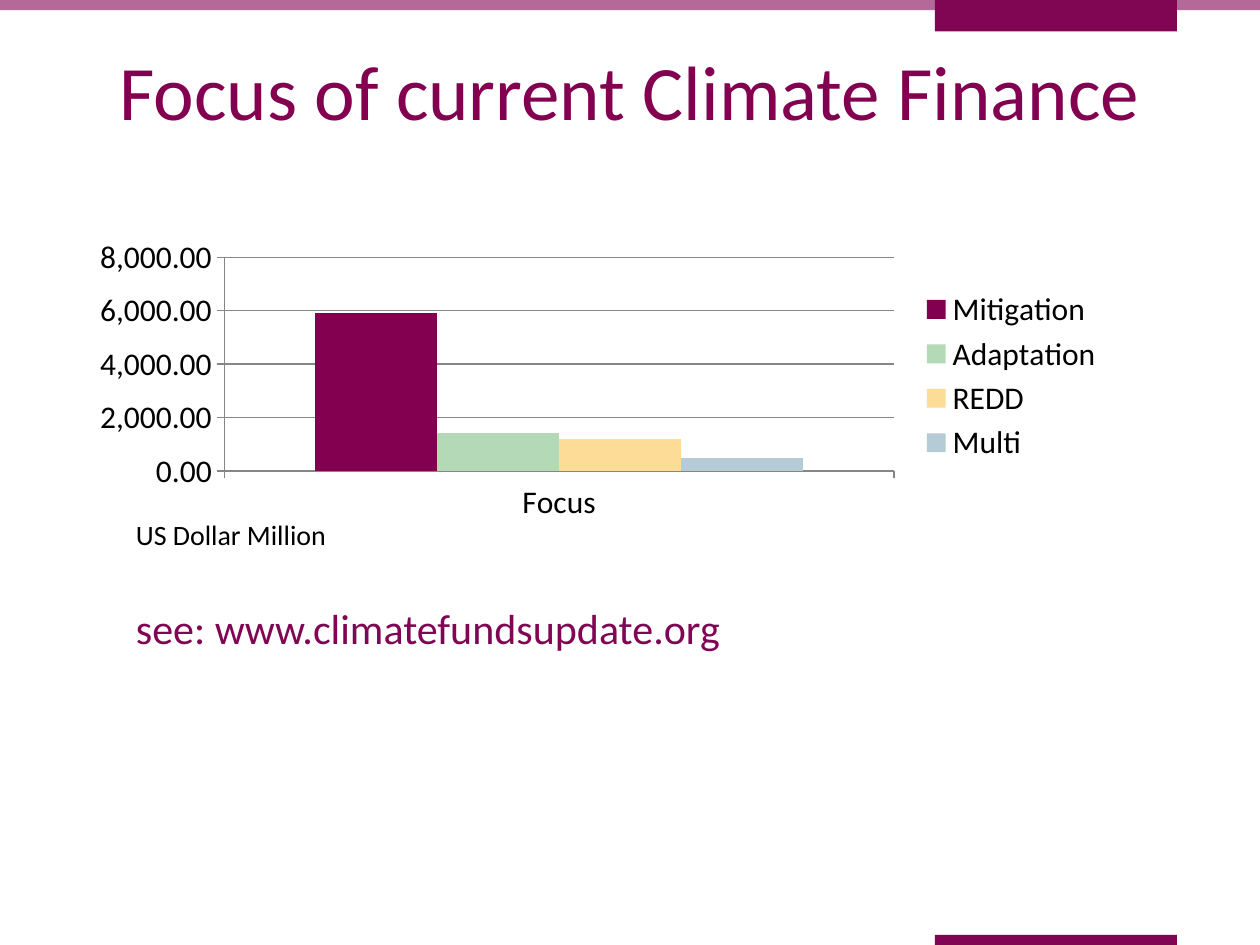
"""Build the slide on the focus of current climate finance."""
from lxml import etree
from pptx import Presentation
from pptx.chart.data import CategoryChartData
from pptx.dml.color import RGBColor
from pptx.enum.chart import XL_CHART_TYPE as ChartType, XL_LEGEND_POSITION as LegendPosition
from pptx.enum.chart import XL_TICK_MARK as TickMark
from pptx.enum.shapes import MSO_SHAPE as Shape
from pptx.enum.text import PP_ALIGN as Align
from pptx.oxml.ns import qn
from pptx.util import Inches, Pt

FONT = "Calibri"
PLUM = RGBColor(0x80, 0x06, 0x54)
DEEP_PLUM = RGBColor(0x83, 0x00, 0x51)
MAUVE = RGBColor(0xB3, 0x6A, 0x98)
GREEN = RGBColor(0xB4, 0xD9, 0xB6)
YELLOW = RGBColor(0xFC, 0xDC, 0x97)
BLUE = RGBColor(0xB5, 0xCC, 0xD7)
GRAY = RGBColor(0x86, 0x86, 0x86)
BLACK = RGBColor(0x00, 0x00, 0x00)


def write(paragraph, text, size, color, align=Align.LEFT, before=0):
    paragraph.alignment = align
    if before:
        paragraph.space_before = Pt(before)
    run = paragraph.add_run()
    run.text = text
    run.font.name = FONT
    run.font.size = Pt(size)
    run.font.color.rgb = color


prs = Presentation()
prs.slide_width = Inches(10)
prs.slide_height = Inches(7.5)
slide = prs.slides.add_slide(prs.slide_layouts[6])

for left, top, width, height, color in (
    (0, 0, 10, 0.08, MAUVE),
    (7.42, 7.42, 1.92, 0.08, PLUM),
    (7.42, 0, 1.92, 0.25, PLUM),
):
    band = slide.shapes.add_shape(
        Shape.RECTANGLE, Inches(left), Inches(top), Inches(width), Inches(height)
    )
    band.shadow.inherit = False
    band.fill.solid()
    band.fill.fore_color.rgb = color
    band.line.fill.background()

title = slide.shapes.add_textbox(Inches(0.5), Inches(0.3), Inches(9), Inches(1.25)).text_frame
title.word_wrap = True
write(title.paragraphs[0], "Focus of current Climate Finance", size=44, color=DEEP_PLUM,
      align=Align.CENTER)

funding = (
    ("Mitigation", 5900, DEEP_PLUM),
    ("Adaptation", 1400, GREEN),
    ("REDD", 1200, YELLOW),
    ("Multi", 500, BLUE),
)
finance = CategoryChartData(number_format="#,##0.00")
finance.categories = ["Focus"]
for focus, amount, color in funding:
    finance.add_series(focus, [amount])
chart = slide.shapes.add_chart(
    ChartType.COLUMN_CLUSTERED, Inches(0.5), Inches(1.75), Inches(8.36), Inches(2.47), finance
).chart
chart.has_title = False
chart.font.name = FONT
chart.font.size = Pt(18)
chart.font.color.rgb = BLACK
chart.has_legend = True
chart.legend.position = LegendPosition.RIGHT
chart.legend.include_in_layout = False

columns = chart.plots[0]
columns.vary_by_categories = False
columns.gap_width = 150
columns.overlap = 0
for series, (focus, amount, color) in zip(columns.series, funding):
    series.format.fill.solid()
    series.format.fill.fore_color.rgb = color

amounts = chart.value_axis
amounts.minimum_scale = 0
amounts.maximum_scale = 8000
amounts.major_unit = 2000
amounts.has_major_gridlines = True
amounts.tick_labels.number_format = "#,##0.00"
amounts.tick_labels.number_format_is_linked = False
for axis in (chart.category_axis, amounts):
    axis.major_tick_mark = TickMark.OUTSIDE
    axis.minor_tick_mark = TickMark.NONE
for rule in (chart.category_axis.format.line, amounts.format.line,
             amounts.major_gridlines.format.line):
    rule.color.rgb = GRAY
    rule.width = Pt(0.75)

plot_area = columns._element.getparent()
for old_layout in plot_area.findall(qn("c:layout")):
    plot_area.remove(old_layout)
layout = etree.Element(qn("c:layout"))
manual = etree.SubElement(layout, qn("c:manualLayout"))
for tag, value in (
    ("layoutTarget", "inner"), ("xMode", "edge"), ("yMode", "edge"),
    ("x", "0.153"), ("y", "0.118"), ("w", "0.636"), ("h", "0.687"),
):
    etree.SubElement(manual, qn(f"c:{tag}")).set("val", value)
plot_area.insert(0, layout)

source = slide.shapes.add_textbox(Inches(0.98), Inches(4.06), Inches(7.01), Inches(1.58)).text_frame
source.word_wrap = True
write(source.paragraphs[0], "US Dollar Million", size=16, color=BLACK)
write(source.add_paragraph(), "see: www.climatefundsupdate.org", size=24, color=PLUM, before=29)

prs.save("out.pptx")
